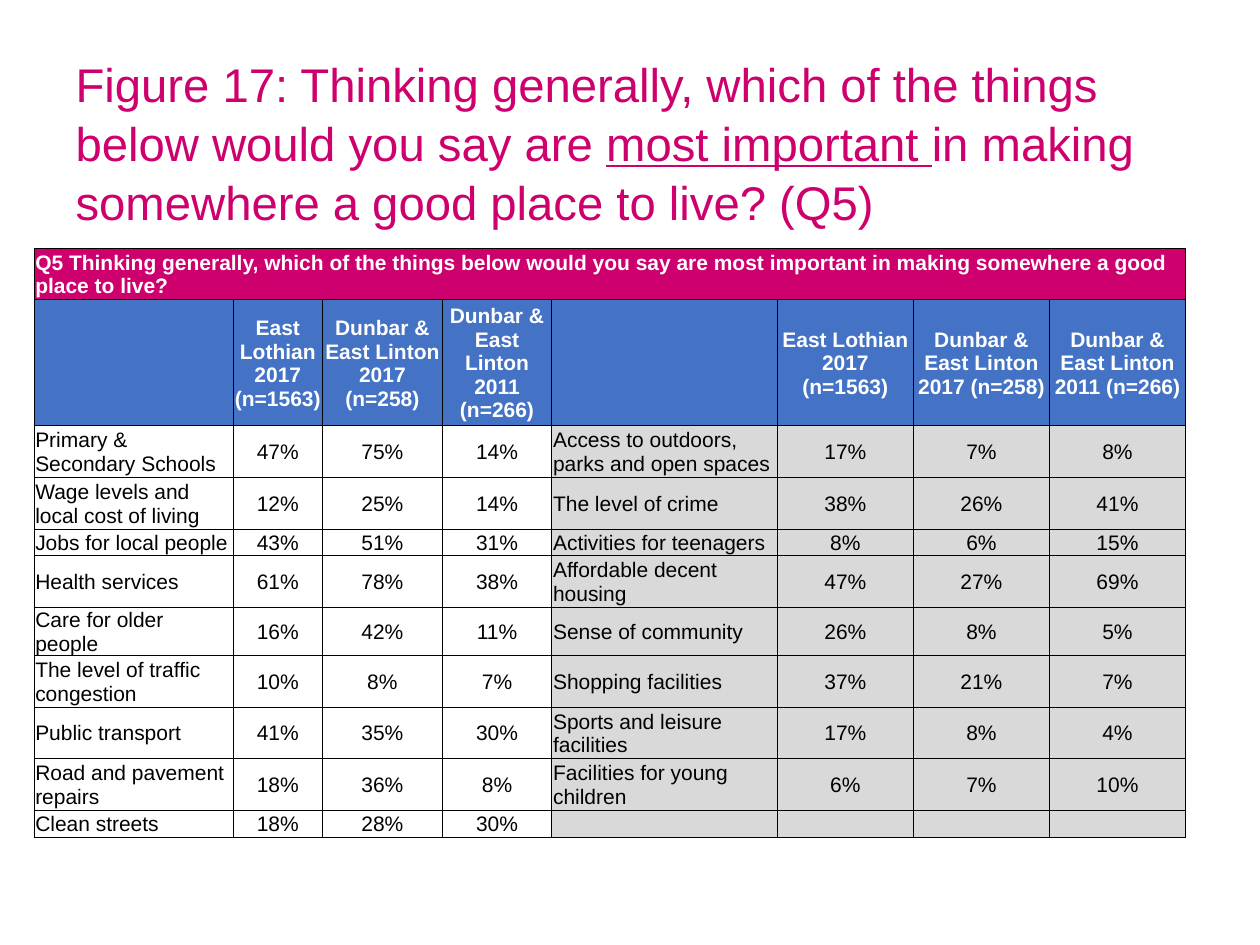
import pptx
import pptx.dml.color
import pptx.enum.text
import pptx.oxml.ns
import pptx.util
from lxml import etree

Inches, Pt = pptx.util.Inches, pptx.util.Pt
Align = pptx.enum.text.PP_ALIGN
Anchor = pptx.enum.text.MSO_ANCHOR

PINK, BLUE, GREY, WHITE, BLACK = "CD006E", "4472C4", "D9D9D9", "FFFFFF", "000000"

TITLE = [
    ("Figure 17: Thinking generally, which of the things below would you say are ", False),
    ("most important ", True),
    ("in making somewhere a good place to live? (Q5)", False),
]
QUESTION = ("Q5 Thinking generally, which of the things below would you say are "
            "most important in making somewhere a good place to live?")
GROUPS = ["", "East Lothian 2017 (n=1563)", "Dunbar & East Linton 2017 (n=258)",
          "Dunbar & East Linton 2011 (n=266)"]
LEFT_ANSWERS = [
    ("Primary & Secondary Schools", "47%", "75%", "14%"),
    ("Wage levels and local cost of living", "12%", "25%", "14%"),
    ("Jobs for local people", "43%", "51%", "31%"),
    ("Health services", "61%", "78%", "38%"),
    ("Care for older people", "16%", "42%", "11%"),
    ("The level of traffic congestion", "10%", "8%", "7%"),
    ("Public transport", "41%", "35%", "30%"),
    ("Road and pavement repairs", "18%", "36%", "8%"),
    ("Clean streets", "18%", "28%", "30%"),
]
RIGHT_ANSWERS = [
    ("Access to outdoors, parks and open spaces", "17%", "7%", "8%"),
    ("The level of crime", "38%", "26%", "41%"),
    ("Activities for teenagers", "8%", "6%", "15%"),
    ("Affordable decent housing", "47%", "27%", "69%"),
    ("Sense of community", "26%", "8%", "5%"),
    ("Shopping facilities", "37%", "21%", "7%"),
    ("Sports and leisure facilities", "17%", "8%", "4%"),
    ("Facilities for young children", "6%", "7%", "10%"),
    ("", "", "", ""),
]
COLUMN_WIDTHS = [1.58, 0.71, 0.95, 0.87, 1.79, 1.08, 1.08, 1.08]
ROW_HEIGHTS = [0.41, 1, 0.41, 0.41, 0.21, 0.41, 0.38, 0.41, 0.41, 0.41, 0.21]


def rgb(value):
    return pptx.dml.color.RGBColor.from_string(value)


def apply(target, values):
    for name, value in values.items():
        setattr(target, name, value)


def add_span(para, text, color, **font):
    span = para.add_run()
    span.text = text
    span.font.color.rgb = rgb(color)
    apply(span.font, {"name": "Arial", **font})


def add_borders(cell):
    """Draw a thin black line on all four sides; call before filling the cell."""
    properties = cell._tc.get_or_add_tcPr()
    qn = pptx.oxml.ns.qn
    for side in ("a:lnL", "a:lnR", "a:lnT", "a:lnB"):
        line = etree.SubElement(properties, qn(side), w=str(Pt(0.5)))
        fill = etree.SubElement(line, qn("a:solidFill"))
        etree.SubElement(fill, qn("a:srgbClr"), val=BLACK)


def format_cell(cell, text, fill, color, bold, align):
    add_borders(cell)
    cell.fill.solid()
    cell.fill.fore_color.rgb = rgb(fill)
    apply(cell, {"margin_left": Inches(0.01), "margin_right": Inches(0.01),
                 "margin_top": Inches(0.01), "margin_bottom": 0,
                 "vertical_anchor": Anchor.MIDDLE})
    para = cell.text_frame.paragraphs[0]
    para.alignment = align
    if text:
        add_span(para, text, color, size=Pt(12), bold=bold)
    else:  # keeps an empty cell from stretching its row
        etree.SubElement(para._p, pptx.oxml.ns.qn("a:endParaRPr"), sz="1200")


def add_title(slide):
    title = slide.shapes.title
    apply(title, {"left": Inches(0.5), "top": Inches(0.3),
                  "width": Inches(9), "height": Inches(1.64)})
    apply(title.text_frame, {"word_wrap": True, "vertical_anchor": Anchor.MIDDLE,
                             "auto_size": pptx.enum.text.MSO_AUTO_SIZE.NONE})
    para = title.text_frame.paragraphs[0]
    apply(para, {"alignment": Align.LEFT, "line_spacing": 1.04})
    for text, underline in TITLE:
        add_span(para, text, PINK, size=Pt(27), underline=underline)


def add_answer_table(slide):
    rows = [[QUESTION] + [""] * 7, GROUPS * 2]
    rows += [left + right for left, right in zip(LEFT_ANSWERS, RIGHT_ANSWERS)]
    table = slide.shapes.add_table(
        len(rows), len(COLUMN_WIDTHS), Inches(0.27), Inches(1.97),
        Inches(sum(COLUMN_WIDTHS)), Inches(sum(ROW_HEIGHTS))).table
    apply(table, {"first_row": False, "horz_banding": False})
    for column, width in zip(table.columns, COLUMN_WIDTHS):
        column.width = Inches(width)
    for row, height in zip(table.rows, ROW_HEIGHTS):
        row.height = Inches(height)

    for r, row in enumerate(rows):
        for c, text in enumerate(row):
            heading = r < 2
            if heading:
                fill = (PINK, BLUE)[r]
            else:
                fill = WHITE if c < 4 else GREY
            align = Align.LEFT if r == 0 or c % 4 == 0 else Align.CENTER
            format_cell(table.cell(r, c), text, fill,
                        WHITE if heading else BLACK, heading, align)
    table.cell(0, 0).merge(table.cell(0, len(COLUMN_WIDTHS) - 1))


def main():
    deck = pptx.Presentation()
    apply(deck, {"slide_width": Inches(10), "slide_height": Inches(7.5)})
    slide = deck.slides.add_slide(deck.slide_layouts[5])
    add_title(slide)
    add_answer_table(slide)
    deck.save("out.pptx")


if __name__ == "__main__":
    main()
